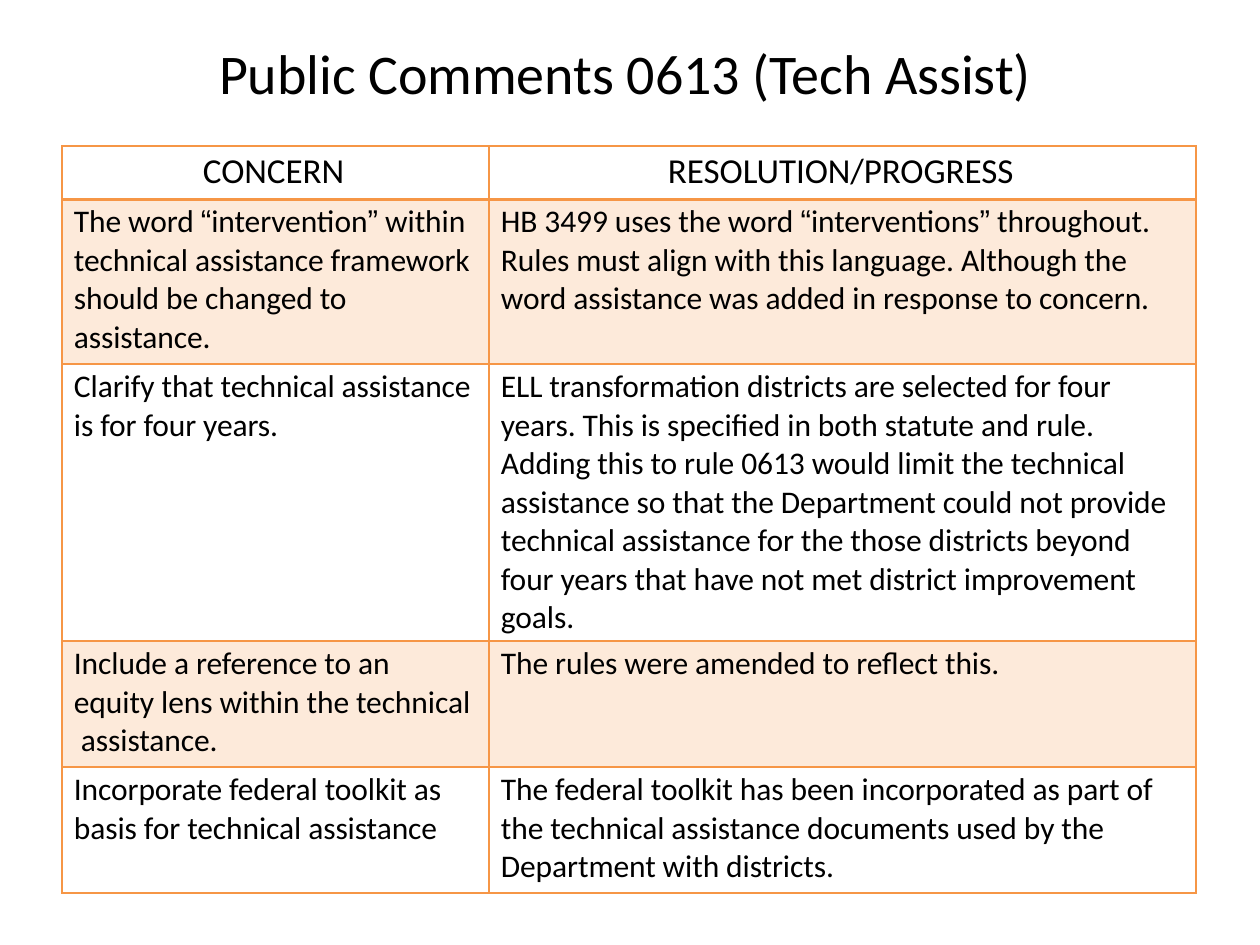
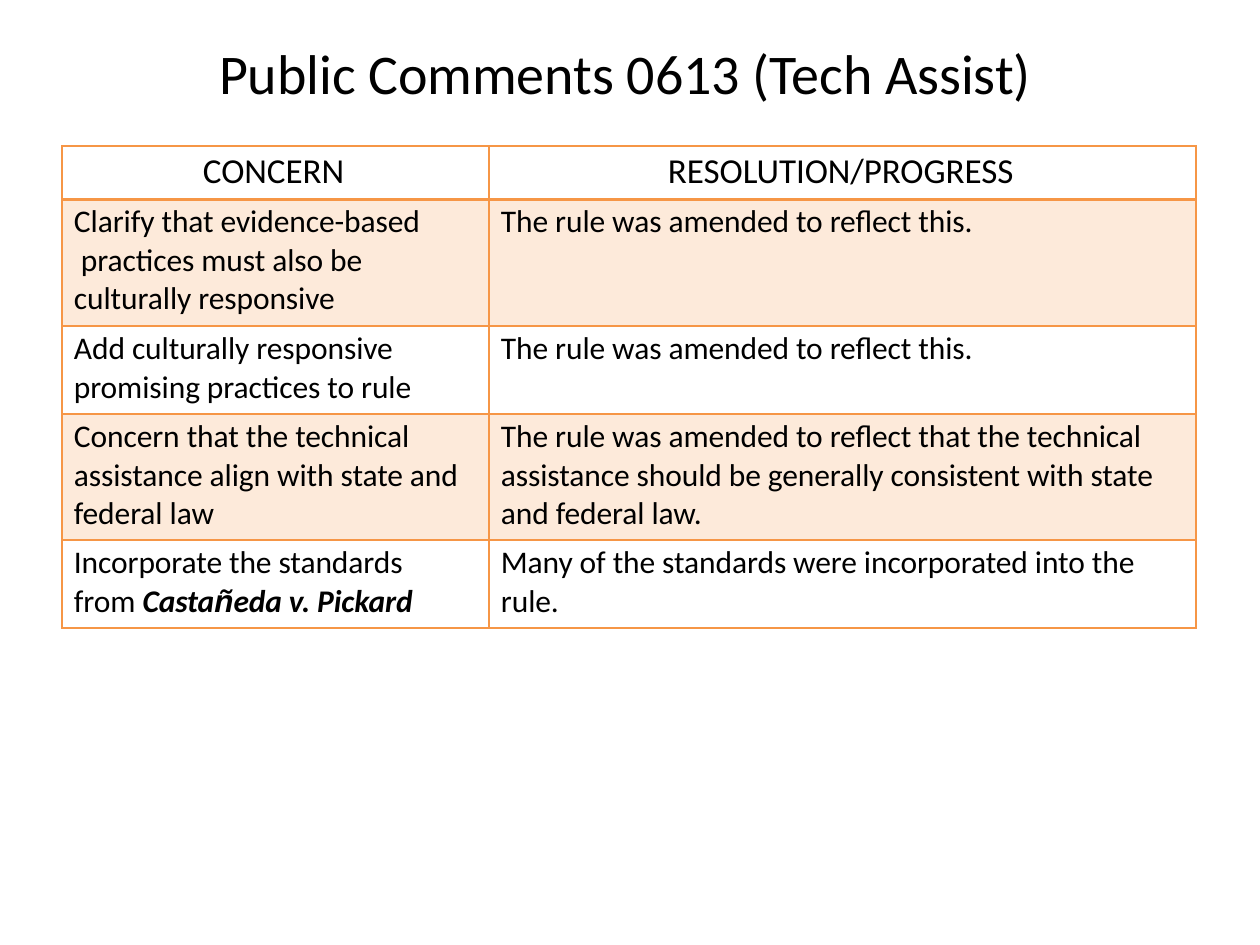
from itertools import groupby

from lxml.etree import SubElement
from pptx import Presentation
from pptx.dml.color import RGBColor
from pptx.enum.text import MSO_AUTO_SIZE as AutoSize
from pptx.oxml.ns import qn
from pptx.util import Emu, Inches, Pt

BLACK = RGBColor(0x00, 0x00, 0x00)
ORANGE = RGBColor(0xF6, 0x96, 0x46)
PEACH = RGBColor(0xFD, 0xEA, 0xDA)

PX_PER_INCH = 126
TITLE = "Public Comments 0613 (Tech Assist)"
HEADINGS = ("CONCERN", "RESOLUTION/PROGRESS")
HEADING_INDENTS = (141, 179)
COLUMN_WIDTHS = (427, 707)
HEADING_HEIGHT = 54
CELL_INDENT = 12
EMPHASIS = "**"

# Each row: height, concern, resolution. "\v" breaks a line, "\n" starts a paragraph.
FRAMEWORK_ROWS = [
    (164,
     "The word “intervention” within\vtechnical assistance framework\v"
     "should be changed to\vassistance.",
     "HB 3499 uses the word “interventions” throughout.\v"
     "Rules must align with this language. Although the\v"
     "word assistance was added in response to concern."),
    (277,
     "Clarify that technical assistance\vis for four years.",
     "ELL transformation districts are selected for four\v"
     "years. This is specified in both statute and rule.\n"
     "Adding this to rule 0613 would limit the technical\v"
     "assistance so that the Department could not provide\v"
     "technical assistance for the those districts beyond\v"
     "four years that have not met district improvement\vgoals."),
    (126,
     "Include a reference to an\vequity lens within the technical\v assistance.",
     "The rules were amended to reflect this."),
    (126,
     "Incorporate federal toolkit as\vbasis for technical assistance",
     "The federal toolkit has been incorporated as part of\v"
     "the technical assistance documents used by the\v"
     "Department with districts."),
]
PRACTICE_ROWS = [
    (126,
     "Clarify that evidence-based\v practices must also be\vculturally responsive",
     "The rule was amended to reflect this."),
    (88,
     "Add culturally responsive\vpromising practices to rule",
     "The rule was amended to reflect this."),
    (126,
     "Concern that the technical\vassistance align with state and\vfederal law",
     "The rule was amended to reflect that the technical\v"
     "assistance should be generally consistent with state\vand federal law."),
    (88,
     "Incorporate the standards\vfrom **Castañeda v. Pickard**",
     "Many of the standards were incorporated into the\vrule."),
]


def px(length):
    return Emu(round(length * Inches(1) / PX_PER_INCH))


def font_for(letter):
    return "Arial" if letter in "“”ñ" else "Calibri"


class CommentDeck:
    """Holds the shared style and the slide being built."""

    def __init__(self):
        self.deck = Presentation()
        self.deck.slide_width, self.deck.slide_height = Inches(10), Inches(7.5)
        self.page = None

    def add_page(self):
        self.page = self.deck.slides.add_slide(self.deck.slide_layouts[6])

    def add_span(self, para, text, size, strong=False):
        span = para.add_run()
        span.text = text
        font = span.font
        font.name, font.size = font_for(text[0]), Pt(size)
        font.color.rgb = BLACK
        font.bold = font.italic = strong
        span._r.get_or_add_rPr().set("spc", "-5")

    def set_text(self, frame, text, size, space_before=0):
        """Fill the frame's paragraphs, toggling bold italic at each emphasis mark."""
        frame.text = "\n" * text.count("\n")
        frame.word_wrap = True
        for para, content in zip(frame.paragraphs, text.split("\n")):
            for line_number, line in enumerate(content.split("\v")):
                if line_number:
                    para.add_line_break()
                for part_number, part in enumerate(line.split(EMPHASIS)):
                    for _, letters in groupby(part, font_for):
                        self.add_span(para, "".join(letters), size, part_number % 2 == 1)
        frame.paragraphs[0].space_before = Pt(space_before)

    def add_title(self, text):
        box = self.page.shapes.add_textbox(px(218), px(38), px(823), px(69))
        frame = box.text_frame
        frame.margin_left = px(1)
        frame.margin_top = frame.margin_right = frame.margin_bottom = 0
        self.set_text(frame, text, 32)
        frame.auto_size = AutoSize.SHAPE_TO_FIT_TEXT

    def add_borders(self, cell, top, bottom):
        properties = cell._tc.get_or_add_tcPr()
        for side, width in (("L", 1), ("R", 1), ("T", top), ("B", bottom)):
            line = SubElement(properties, qn(f"a:ln{side}"), w=str(Pt(width)))
            fill = SubElement(line, qn("a:solidFill"))
            SubElement(fill, qn("a:srgbClr"), val=str(ORANGE))

    def fill_cell(self, cell, row, text, indent):
        self.add_borders(cell, 2 if row == 1 else 1, 2 if row == 0 else 1)
        if row % 2:
            cell.fill.solid()
            cell.fill.fore_color.rgb = PEACH
        else:
            cell.fill.background()
        cell.margin_left = px(indent)
        cell.margin_right = cell.margin_bottom = 0
        cell.margin_top = px(3 if row == 1 else 4)
        size, space_before = (20, 1.8) if row == 0 else (18, 1.4 if row == 1 else 1.9)
        self.set_text(cell.text_frame, text, size, space_before)

    def add_comments(self, comments):
        rows = [(HEADING_HEIGHT, *HEADINGS), *comments]
        height = sum(row[0] for row in rows)
        table = self.page.shapes.add_table(
            len(rows), len(HEADINGS), px(62), px(146),
            px(sum(COLUMN_WIDTHS)), px(height)).table
        table.first_row = table.horz_banding = False
        for column, width in zip(table.columns, COLUMN_WIDTHS):
            column.width = px(width)
        for row, (row_height, *texts) in enumerate(rows):
            table.rows[row].height = px(row_height)
            for column, text in enumerate(texts):
                indent = CELL_INDENT if row else HEADING_INDENTS[column]
                self.fill_cell(table.cell(row, column), row, text, indent)


def main():
    builder = CommentDeck()
    for comments in (FRAMEWORK_ROWS, PRACTICE_ROWS):
        builder.add_page()
        builder.add_title(TITLE)
        builder.add_comments(comments)
    builder.deck.save("out.pptx")


if __name__ == "__main__":
    main()
